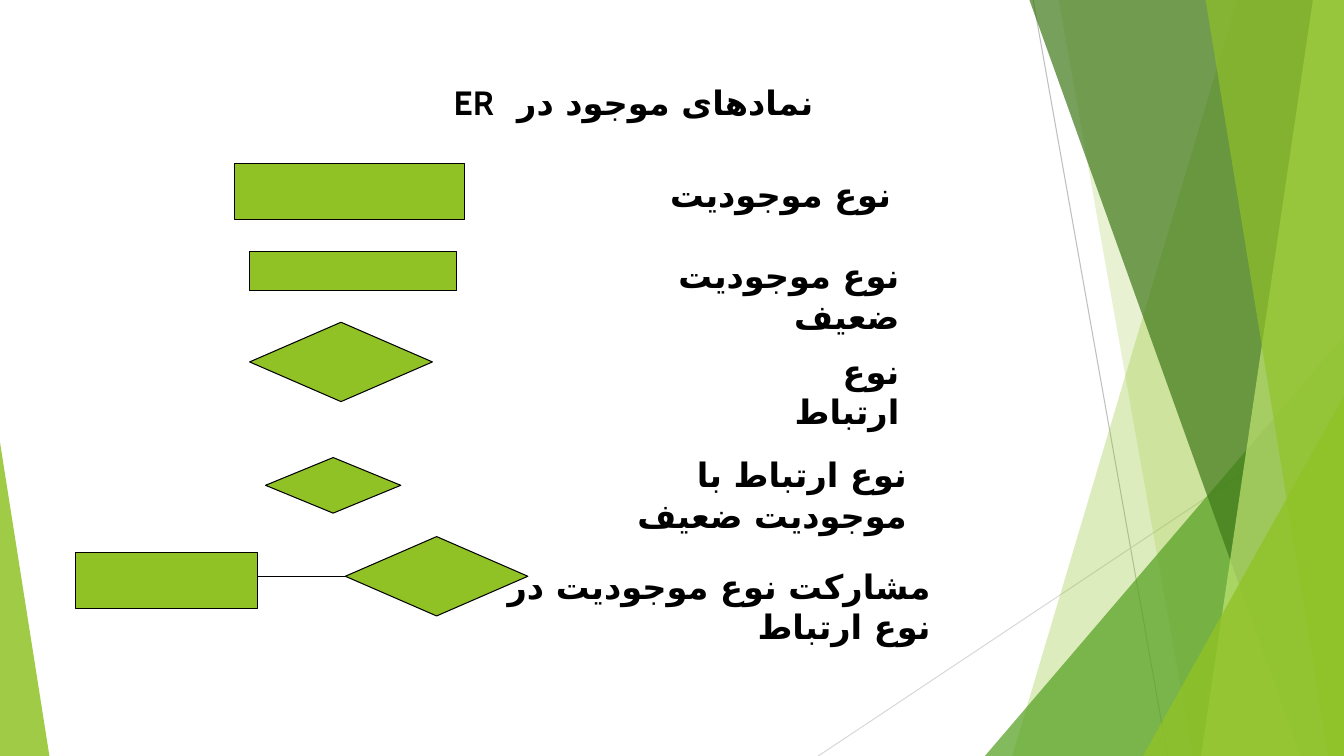
from dataclasses import dataclass

from pptx import Presentation
from pptx.dml.color import RGBColor
from pptx.enum.shapes import MSO_CONNECTOR as Conn, MSO_SHAPE as Shape
from pptx.enum.text import MSO_AUTO_SIZE as AutoSize, PP_ALIGN as Align
from pptx.oxml.ns import qn
from pptx.util import Pt
from lxml.etree import SubElement


@dataclass(frozen=True)
class Theme:
    lime: str = "90C226"
    green: str = "54A021"
    dark: str = "3F7819"
    pale: str = "C0E474"
    ink: str = "000000"
    ray: str = "BFBFBF"
    faint_ray: str = "D9D9D9"
    body_font: str = "Arial"
    title_font: str = "Cabin"
    script_font: str = "DejaVu Sans"
    size: float = 24
    line: float = 0.75


T = Theme()
W, H = 960, 540
TOP = -0.6

# start x, start y, end x, end y, colour
RAYS = [
    (738, 0, 834, H, T.ray),
    (W, 290, 584.5, H, T.faint_ray),
]
# Bands reach the right edge: top-left x, bottom-left x, colour, opacity %
# Wedges are right triangles: left, top, width, apex position, colour, opacity %
BACKDROP = [
    ("band", 884, 723, T.lime, 30),
    ("band", 756, 852, T.lime, 20),
    ("wedge", 703.5, 240, 256.5, 1, T.green, 72),
    ("band", 735.3, 929.3, T.dark, 70),
    ("band", 938.3, 858.2, T.pale, 70),
    ("band", 861.3, 949.2, T.lime, 65),
    ("wedge", 816.5, 283, 143.5, 1, T.lime, 80),
    ("wedge", 0, 316, 35.3, 0, T.lime, 85),
]
# name: shape, left, top, width, height
SYMBOLS = {
    "entity": (Shape.RECTANGLE, 167.2, 116.6, 164.5, 39.9),
    "weak entity": (Shape.RECTANGLE, 178.3, 179.5, 147.7, 28.3),
    "relation": (Shape.DIAMOND, 178.3, 230.2, 130.6, 56.7),
    "weak relation": (Shape.DIAMOND, 189.7, 326.8, 96.6, 39.7),
    "participant": (Shape.RECTANGLE, 53.8, 394.6, 130.4, 39.9),
    "participation": (Shape.DIAMOND, 246.7, 383.3, 130.4, 56.7),
}
# text, left, top, width
LABELS = [
    ("نوع موجوديت", 462, 121, 181.5),
    ("نوع موجوديت ضعيف", 417, 178.7, 232.5),
    ("نوع ارتباط", 541.5, 247, 108),
    ("نوع ارتباط با موجوديت ضعيف", 399.8, 321, 255),
    ("مشاركت نوع موجوديت در نوع ارتباط", 342.8, 400.5, 329),
]
TITLE = ("نمادهای موجود در  ER", 141, 54.8, 447)


def rgb(code):
    return RGBColor.from_string(code)


def add_line(x1, y1, x2, y2, color):
    c = s.shapes.add_connector(Conn.STRAIGHT, Pt(x1), Pt(y1), Pt(x2), Pt(y2))
    c.line.color.rgb = rgb(color)
    c.line.width = Pt(T.line)
    SubElement(c._element.spPr, qn("a:effectLst"))
    return c


def fill_clear(sp, color, opacity):
    """Fill without an outline, at the given opacity in percent."""
    sp.shadow.inherit = False
    sp.line.fill.background()
    sp.fill.solid()
    sp.fill.fore_color.rgb = rgb(color)
    clr = sp._element.spPr.find(qn("a:solidFill"))[0]
    SubElement(clr, qn("a:alpha")).set("val", str(opacity * 1000))


def add_band(top_x, bottom_x, color, opacity):
    fb = s.shapes.build_freeform(top_x, TOP, scale=Pt(1))
    fb.add_line_segments([(W, TOP), (W, H), (bottom_x, H)], close=True)
    fill_clear(fb.convert_to_shape(), color, opacity)


def add_wedge(left, top, width, apex, color, opacity):
    sp = s.shapes.add_shape(Shape.ISOSCELES_TRIANGLE, Pt(left), Pt(top), Pt(width), Pt(H - top))
    sp.adjustments[0] = apex
    fill_clear(sp, color, opacity)


def add_symbol(kind, *box):
    sp = s.shapes.add_shape(kind, *map(Pt, box))
    sp.shadow.inherit = False
    sp.fill.solid()
    sp.fill.fore_color.rgb = rgb(T.lime)
    sp.line.color.rgb = rgb(T.ink)
    sp.line.width = Pt(T.line)
    return sp


def add_text(text, left, top, width, font, before=0):
    """Add a right-to-left line; before is the space above in percent."""
    tf = s.shapes.add_textbox(Pt(left), Pt(top), Pt(width), Pt(36)).text_frame
    tf.word_wrap = True
    tf.auto_size = AutoSize.SHAPE_TO_FIT_TEXT
    p = tf.paragraphs[0]
    p.alignment = Align.RIGHT
    pPr = p._p.get_or_add_pPr()
    pPr.set("rtl", "1")
    if before:
        spacing = SubElement(pPr, qn("a:spcBef"))
        SubElement(spacing, qn("a:spcPct")).set("val", str(before * 1000))
    r = p.add_run()
    r.text = text
    r.font.name = font
    r.font.size = Pt(T.size)
    r.font.bold = True
    r.font.color.rgb = rgb(T.ink)
    SubElement(r._r.rPr, qn("a:cs")).set("typeface", T.script_font)


prs = Presentation()
prs.slide_width, prs.slide_height = Pt(W), Pt(H)
s = prs.slides.add_slide(prs.slide_layouts[6])

for ray in RAYS:
    add_line(*ray)
draw = {"band": add_band, "wedge": add_wedge}
for kind, *facet in BACKDROP:
    draw[kind](*facet)

symbols = {name: add_symbol(*symbol) for name, symbol in SYMBOLS.items()}
_, left, top, width, height = SYMBOLS["participation"]
_, entity_left, _, entity_width, _ = SYMBOLS["participant"]
middle = top + height / 2
link = add_line(left, middle, entity_left + entity_width, middle, T.ink)
link.begin_connect(symbols["participation"], 1)

for label in LABELS:
    add_text(*label, T.body_font, before=50)
add_text(*TITLE, T.title_font)

prs.save("out.pptx")
